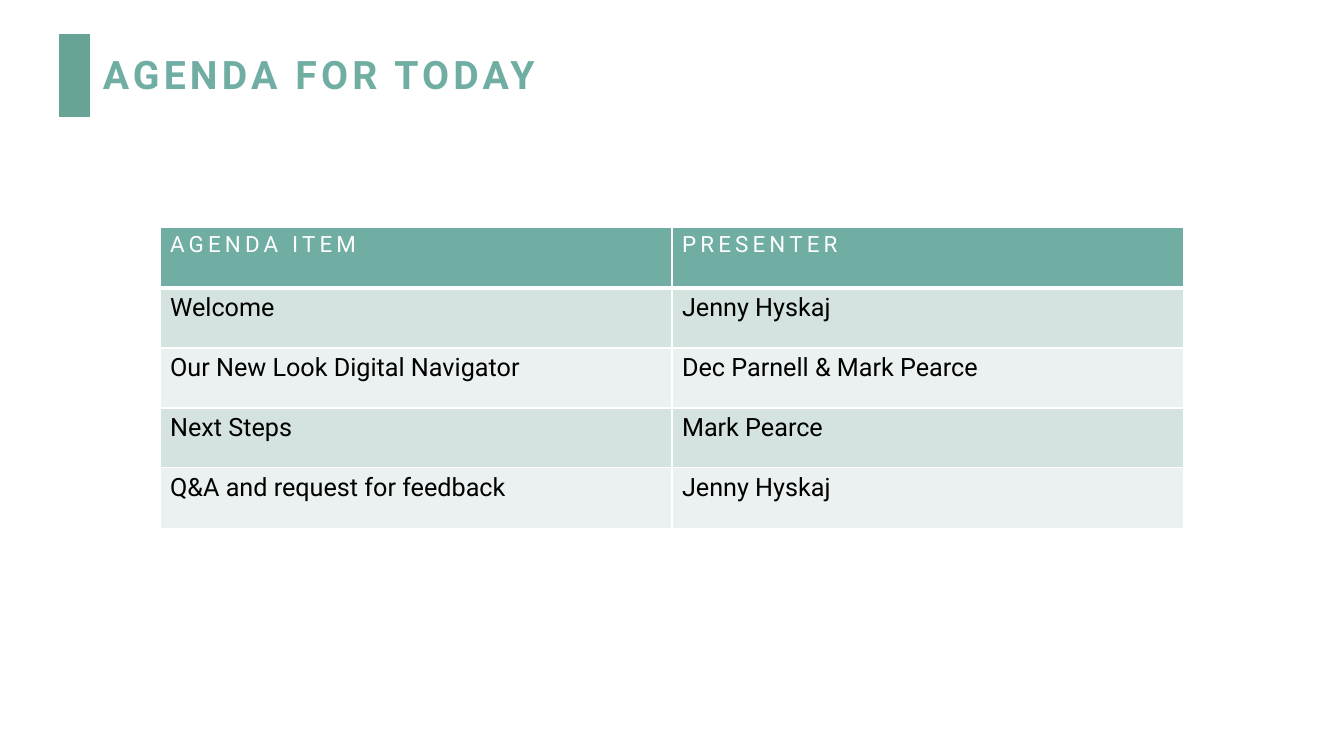
from lxml.etree import SubElement
from pptx import Presentation
from pptx.dml.color import RGBColor
from pptx.enum.shapes import MSO_SHAPE as SHAPE
from pptx.enum.text import MSO_ANCHOR as ANCHOR
from pptx.oxml.ns import qn
from pptx.util import Emu, Pt

PX = 914400 / 100.8
WHITE, BLACK, TEAL, BAR = "FFFFFF", "000000", "70ADA3", "68A495"
BANDS = ["D5E3E0", "EBF1F0"]
AGENDA = [
    ("AGENDA ITEM", "PRESENTER"),
    ("Welcome", "Jenny Hyskaj"),
    ("Our New Look Digital Navigator", "Dec Parnell & Mark Pearce"),
    ("Next Steps", "Mark Pearce"),
    ("Q&A and request for feedback", "Jenny Hyskaj"),
]
ROW_HEIGHTS = [61, 60, 60, 60, 61]


def px(*values):
    return [Emu(round(v * PX)) for v in values]


def add_run(p, text, size, color, bold=False, spacing=0):
    r = p.add_run()
    r.text = text
    r.font.name = "Roboto"
    r.font.size = Pt(size)
    r.font.bold = bold
    r.font.color.rgb = RGBColor.from_string(color)
    r.font._element.set("spc", str(spacing * 100))


prs = Presentation()
prs.slide_width, prs.slide_height = px(1344, 756)
s = prs.slides.add_slide(prs.slide_layouts[6])

bar = s.shapes.add_shape(SHAPE.RECTANGLE, *px(59, 34, 31, 83))
bar.shadow.inherit = False
bar.fill.solid()
bar.fill.fore_color.rgb = RGBColor.from_string(BAR)
bar.line.fill.background()

tf = s.shapes.add_textbox(*px(93, 40, 1023, 73)).text_frame
tf.word_wrap = True
tf.vertical_anchor = ANCHOR.MIDDLE
p = tf.paragraphs[0]
p.line_spacing = 0.9
add_run(p, "AGENDA FOR TODAY", 28, TEAL, True, 3)

frame = s.shapes.add_table(len(AGENDA), 2, *px(160, 227, 1024, 302))
table = frame.table
for col in table.columns:
    col.width = px(512)[0]
for row, height in zip(table.rows, ROW_HEIGHTS):
    row.height = px(height)[0]

for i, texts in enumerate(AGENDA):
    header = i == 0
    for j, text in enumerate(texts):
        cell = table.cell(i, j)
        tcPr = cell._tc.get_or_add_tcPr()
        for side in "LRTB":
            heavy = (header and side == "B") or (i == 1 and side == "T")
            ln = SubElement(tcPr, qn(f"a:ln{side}"), w=str(Pt(3 if heavy else 1)))
            fill = SubElement(ln, qn("a:solidFill"))
            SubElement(fill, qn("a:srgbClr"), val=WHITE)
        cell.fill.solid()
        cell.fill.fore_color.rgb = RGBColor.from_string(TEAL if header else BANDS[(i - 1) % 2])
        p = cell.text_frame.paragraphs[0]
        if header:
            add_run(p, text, 16, WHITE, spacing=3)
        else:
            add_run(p, text, 18, BLACK)

prs.save("out.pptx")
